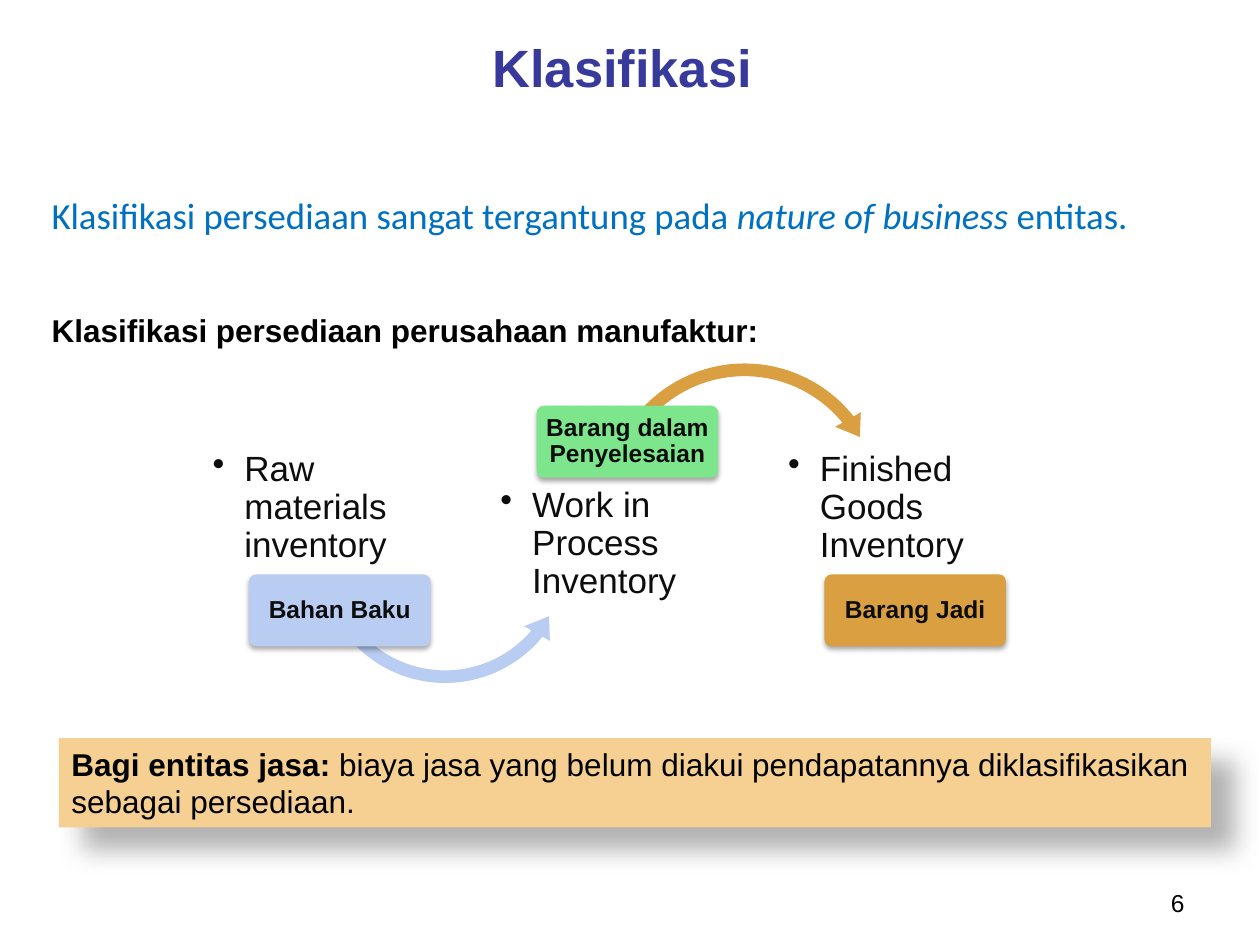
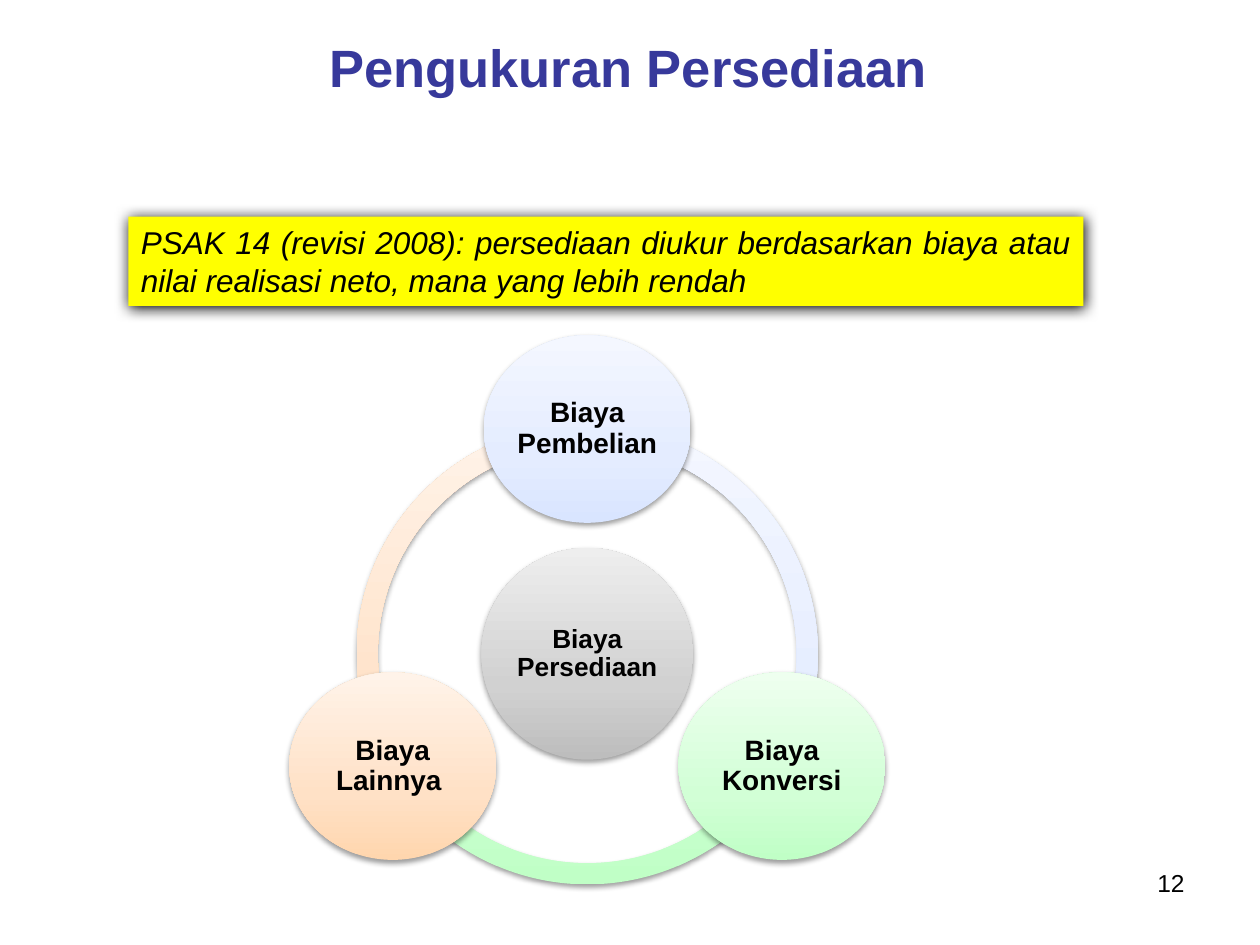
"""Build two slides on inventory classification and measurement."""
from math import cos, radians, sin

from lxml.etree import SubElement
from pptx import Presentation
from pptx.dml.color import RGBColor
from pptx.enum.shapes import MSO_SHAPE as SHAPE
from pptx.enum.text import MSO_ANCHOR as ANCHOR, PP_ALIGN as ALIGN
from pptx.oxml.ns import qn
from pptx.util import Cm, Pt

TITLE_BLUE = RGBColor(0x37, 0x39, 0x9B)
INTRO_BLUE = RGBColor(0x00, 0x70, 0xC0)
BLACK = RGBColor(0x00, 0x00, 0x00)
INK = RGBColor(0x0D, 0x0D, 0x0D)
WHITE = RGBColor(0xFF, 0xFF, 0xFF)
PALE_BLUE = RGBColor(0xB9, 0xCC, 0xF2)
GREEN = RGBColor(0x7D, 0xE6, 0x8C)
OCHRE = RGBColor(0xD9, 0x9F, 0x41)
SAND = RGBColor(0xF5, 0xD0, 0x92)
YELLOW = RGBColor(0xFF, 0xFF, 0x00)


def shades(*codes):
    """Pair three colours with their gradient positions."""
    return list(zip((0, 35, 100), map(RGBColor.from_string, codes)))


BLUE_SHADES = shades("D9E5FF", "E4ECFF", "F4F7FF")
GREEN_SHADES = shades("C0FFC6", "D2FFD6", "EEFFEF")
ORANGE_SHADES = shades("FFD6AE", "FFE1C6", "FFF3E9")
GREY_SHADES = shades("BDBDBD", "D1D1D1", "EEEEEE")

STAGE_SHADOW = (35, 3.1, 1.8, 90)
CIRCLE_SHADOW = (38, 3.1, 1.6, 90)
SERVICE_SHADOW = (30, 15, 18, 45)
RULE_SHADOW = (100, 8.5, 1, 90)
DEFAULT_INSETS = (0.25, 0.13, 0.25, 0.13)

INTRO = [("Klasifikasi persediaan sangat tergantung pada ", ""),
         ("nature of business ", "i"), ("entitas.", "")]
HEADING = [("Klasifikasi persediaan perusahaan manufaktur:", "b")]
SERVICE_NOTE = [
    ("Bagi entitas jasa: ", "b"),
    ("biaya jasa yang belum diakui pendapatannya diklasifikasikan "
     "sebagai persediaan.", "")]
RULE = [("PSAK 14 (revisi 2008): persediaan diukur berdasarkan biaya atau "
         "nilai realisasi neto, mana yang lebih rendah", "i")]

STAGES = [
    ("Raw materials inventory", "Bahan Baku", PALE_BLUE, False,
     (SHAPE.LEFT_CIRCULAR_ARROW, (6.27, 8.53, 5.41, 5.41),
      (0.047, 6.055, 23.81, 90.245, 0.055))),
    ("Work in Process Inventory", "Barang dalam Penyelesaian", GREEN, True,
     (SHAPE.CIRCULAR_ARROW, (12.04, 7.16, 5.94, 5.94),
      (0.043, 5.46, 192.785, 125.755, 0.05))),
    ("Finished Goods Inventory", "Barang Jadi", OCHRE, False, None),
]
ARROW_COLORS = [PALE_BLUE, OCHRE, None]
STAGE_LEFT, STAGE_TOP, STAGE_STEP = 4.11, 8.92, 5.8

COSTS = [("Biaya Pembelian", 270, BLUE_SHADES),
         ("Biaya Konversi", 30, GREEN_SHADES),
         ("Biaya Lainnya ", 150, ORANGE_SHADES)]
RING_X, RING_Y, RING_SIZE, ORBIT = 11.84, 13.18, 9.3, 4.53
HUB_SIZE, COST_SIZE = 4.27, (4.17, 3.78)


def write(sp, runs, size, color=BLACK, font="Arial", align=ALIGN.LEFT,
          anchor=ANCHOR.TOP, insets=DEFAULT_INSETS, spacing=None,
          bullet=False):
    """Fill a shape with one paragraph of (text, style) runs."""
    tf = sp.text_frame
    tf.word_wrap = True
    tf.vertical_anchor = anchor
    (tf.margin_left, tf.margin_top,
     tf.margin_right, tf.margin_bottom) = map(Cm, insets)
    p = tf.paragraphs[0]
    p.alignment = align
    if bullet:
        pPr = p._p.get_or_add_pPr()
        pPr.set("marL", str(Cm(0.64)))
        pPr.set("indent", str(-Cm(0.64)))
        SubElement(pPr, qn("a:buChar")).set("char", "•")
    if spacing:
        p.line_spacing = spacing
    for text, style in runs:
        r = p.add_run()
        r.text = text
        r.font.name = font
        r.font.size = Pt(size)
        r.font.color.rgb = color
        r.font.bold = "b" in style
        r.font.italic = "i" in style


def add_text(slide, place, runs, size, **style):
    """Add a text box."""
    write(slide.shapes.add_textbox(*map(Cm, place)), runs, size, **style)


def paint_gradient(sp, stops):
    """Give a shape a gradient that runs upward through the stops."""
    sp.fill.gradient()
    sp.fill.gradient_angle = 90
    gs_list = sp._element.spPr.find(qn("a:gradFill")).find(qn("a:gsLst"))
    for gs in list(gs_list):
        gs_list.remove(gs)
    for position, color in stops:
        gs = SubElement(gs_list, qn("a:gs"), pos=str(position * 1000))
        SubElement(gs, qn("a:srgbClr"), val=str(color))


def add_shape(slide, kind, place, fill, shadow=None, adjust=()):
    """Add a borderless shape with a solid or gradient fill."""
    sp = slide.shapes.add_shape(kind, *map(Cm, place))
    sp.line.fill.background()
    if isinstance(fill, list):
        paint_gradient(sp, fill)
    else:
        sp.fill.solid()
        sp.fill.fore_color.rgb = fill
    for i, value in enumerate(adjust):
        sp.adjustments[i] = value
    sp.shadow.inherit = False
    if shadow:
        alpha, blur, dist, angle = shadow
        effects = sp._element.spPr.find(qn("a:effectLst"))
        outer = SubElement(effects, qn("a:outerShdw"), blurRad=str(Pt(blur)),
                           dist=str(Pt(dist)), dir=str(angle * 60000),
                           rotWithShape="0")
        clr = SubElement(outer, qn("a:srgbClr"), val=str(BLACK))
        SubElement(clr, qn("a:alpha"), val=str(alpha * 1000))
    return sp


def centered(x, y, w, h):
    """Return the place of a box from its centre."""
    return x - w / 2, y - h / 2, w, h


def add_slide(prs, title, title_left, title_width, number, number_top):
    """Add a blank slide with its title and page number."""
    slide = prs.slides.add_slide(prs.slide_layouts[6])
    add_text(slide, (title_left, 0.56, title_width, 1.57), [(title, "b")], 30,
             color=TITLE_BLUE, align=ALIGN.CENTER, anchor=ANCHOR.MIDDLE)
    add_text(slide, (18.21, number_top, 5.92, 0.89), [(number, "")], 14,
             align=ALIGN.RIGHT)
    return slide


def add_label(sp, text, size, color, inset):
    """Write a bold centred label in a shape."""
    write(sp, [(text, "b")], size, color=color, align=ALIGN.CENTER,
          anchor=ANCHOR.MIDDLE, insets=inset, spacing=0.9)


def build_classification(prs):
    """Build the slide of inventory stages."""
    slide = add_slide(prs, "Klasifikasi", 0.99, 23.11, "6", 17.78)
    add_text(slide, (0.79, 3.76, 23.42, 2.06), INTRO, 21, color=INTRO_BLUE,
             font="Calibri", align=ALIGN.JUSTIFY)
    add_text(slide, (0.79, 6.15, 17.07, 1.02), HEADING, 18)
    for i, (term, name, color, name_on_top, arrow) in enumerate(STAGES):
        left = STAGE_LEFT + i * STAGE_STEP
        panel = add_shape(slide, SHAPE.ROUNDED_RECTANGLE,
                          (left, STAGE_TOP, 4.11, 3.4), WHITE, adjust=[0.1])
        write(panel, [(term, "")], 20, color=INK, spacing=0.9, bullet=True,
              insets=(0.08, 0.81 if name_on_top else 0.08, 0.08, 0.08))
        if arrow:
            kind, place, adjust = arrow
            add_shape(slide, kind, place, ARROW_COLORS[i], adjust=adjust)
        name_top = 8.18 if name_on_top else 11.58
        tag = add_shape(slide, SHAPE.ROUNDED_RECTANGLE,
                        (left + 0.91, name_top, 3.66, 1.45), color,
                        STAGE_SHADOW, [0.1])
        add_label(tag, name, 14, INK, (0.08, 0.05, 0.08, 0.05))
    note = add_shape(slide, SHAPE.RECTANGLE, (1.19, 14.88, 23.22, 1.8), SAND,
                     SERVICE_SHADOW)
    write(note, SERVICE_NOTE, 18)


def build_measurement(prs):
    """Build the slide of inventory costs around a hub."""
    slide = add_slide(prs, "Pengukuran Persediaan", 1.24, 22.86, "12", 17.37)
    rule = add_shape(slide, SHAPE.RECTANGLE, (2.59, 4.37, 19.25, 1.8), YELLOW,
                     RULE_SHADOW)
    write(rule, RULE, 18, align=ALIGN.JUSTIFY)
    for _, angle, fill in reversed(COSTS):
        end = (angle + 120) % 360
        add_shape(slide, SHAPE.BLOCK_ARC,
                  centered(RING_X, RING_Y, RING_SIZE, RING_SIZE), fill,
                  CIRCLE_SHADOW, (angle * 0.6, end * 0.6, 0.046))
    circles = [("Biaya Persediaan", 15, RING_X, RING_Y,
                (HUB_SIZE, HUB_SIZE), GREY_SHADES)]
    for text, angle, fill in COSTS:
        x = RING_X + ORBIT * cos(radians(angle))
        y = RING_Y + ORBIT * sin(radians(angle))
        circles.append((text, 16, x, y, COST_SIZE, fill))
    for text, size, x, y, extent, fill in circles:
        sp = add_shape(slide, SHAPE.OVAL, centered(x, y, *extent), fill,
                       CIRCLE_SHADOW)
        add_label(sp, text, size, BLACK, (0.05,) * 4)


def main():
    """Build and save the slides."""
    prs = Presentation()
    prs.slide_width, prs.slide_height = Cm(25.4), Cm(19.05)
    build_classification(prs)
    build_measurement(prs)
    prs.save("out.pptx")


if __name__ == "__main__":
    main()
